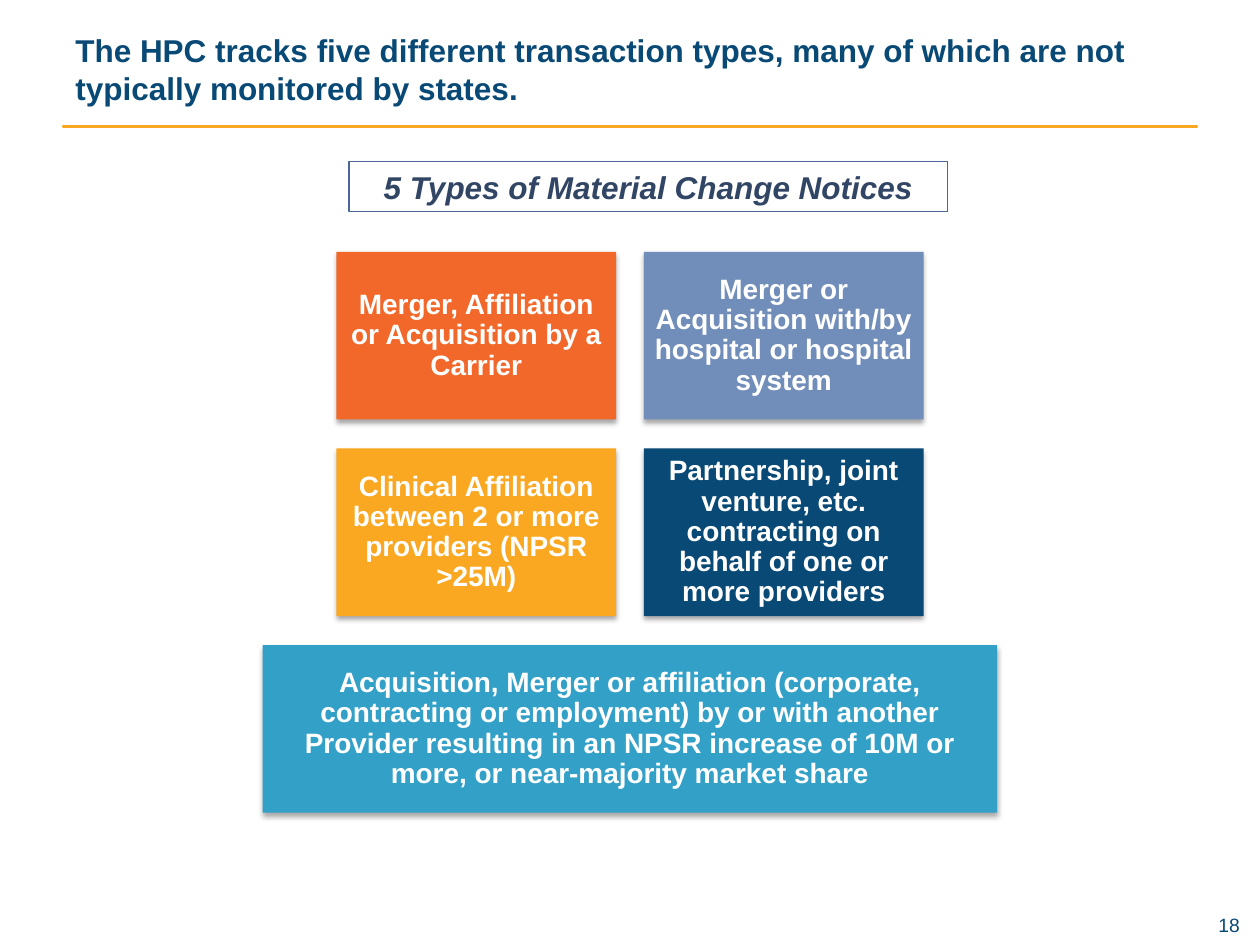
from lxml.etree import SubElement
from pptx import Presentation
from pptx.dml.color import RGBColor
from pptx.enum.shapes import MSO_SHAPE
from pptx.enum.text import MSO_ANCHOR, PP_ALIGN
from pptx.oxml.ns import qn
from pptx.util import Inches, Pt

NAVY = "094975"
GOLD = "FAA721"
WHITE = "FFFFFF"


def colour(value):
    return RGBColor.from_string(value)


class SlideBuilder:
    font = "Arial"

    def __init__(self, page):
        self.page = page

    def fill_text(self, box, text, size, ink, align=PP_ALIGN.LEFT, anchor=MSO_ANCHOR.MIDDLE,
                  margins=(0.1, 0.05), spacing=1.0, bold=True, italic=False):
        frame = box.text_frame
        frame.word_wrap = True
        frame.vertical_anchor = anchor
        frame.margin_left = frame.margin_right = Inches(margins[0])
        frame.margin_top = frame.margin_bottom = Inches(margins[1])
        para = frame.paragraphs[0]
        para.alignment = align
        para.line_spacing = spacing
        span = para.add_run()
        span.text = text
        span.font.name = self.font
        span.font.size = Pt(size)
        span.font.bold = bold
        span.font.italic = italic
        span.font.color.rgb = colour(ink)

    def label(self, place, text, size, ink, **style):
        box = self.page.shapes.add_textbox(*map(Inches, place))
        self.fill_text(box, text, size, ink, **style)

    def rectangle(self, place, fill=None, line=None, width=1):
        box = self.page.shapes.add_shape(MSO_SHAPE.RECTANGLE, *map(Inches, place))
        box.shadow.inherit = False
        if fill:
            box.fill.solid()
            box.fill.fore_color.rgb = colour(fill)
        else:
            box.fill.background()
        if line:
            box.line.color.rgb = colour(line)
            box.line.width = Pt(width)
        else:
            box.line.fill.background()
        return box

    def add_shadow(self, box):
        effects = box._element.spPr.find(qn("a:effectLst"))
        shadow = SubElement(effects, qn("a:outerShdw"), blurRad=str(Pt(3.1)),
                            dist=str(Pt(1.8)), dir="5400000", rotWithShape="0")
        tint = SubElement(shadow, qn("a:srgbClr"), val="000000")
        SubElement(tint, qn("a:alpha"), val="35000")

    def heading(self, place, text):
        box = self.rectangle(place, line="4A6796", width=0.75)
        self.fill_text(box, text, 18, "314564", align=PP_ALIGN.CENTER, italic=True)

    def card(self, place, text, fill):
        box = self.rectangle(place, fill)
        self.add_shadow(box)
        self.fill_text(box, text, 16, WHITE, align=PP_ALIGN.CENTER,
                       margins=(0.07, 0.07), spacing=0.9)


def main():
    deck = Presentation()
    deck.slide_width = Inches(10)
    deck.slide_height = Inches(7.5)
    builder = SlideBuilder(deck.slides.add_slide(deck.slide_layouts[6]))

    builder.rectangle((0.5, 1, 9, 0.01), GOLD, GOLD)
    builder.label((7.42, 7.25, 2.42, 0.19), "18", 11, NAVY, align=PP_ALIGN.RIGHT,
                  anchor=MSO_ANCHOR.TOP, margins=(0, 0), bold=False)
    builder.label((0.5, 0.17, 9, 0.75),
                  "The HPC tracks five different transaction types, "
                  "many of which are not typically monitored by states.", 18, NAVY)
    builder.heading((2.77, 1.28, 4.75, 0.4), "5 Types of Material Change Notices")

    left, top, width, height = 2.67, 2, 2.22, 1.33
    column_step, row_step = 2.44, 1.56
    notices = [
        ("Merger, Affiliation or Acquisition by a Carrier", "F2682A"),
        ("Merger or Acquisition with/by hospital or hospital system", "718DB9"),
        ("Clinical Affiliation between 2 or more providers (NPSR >25M)", GOLD),
        ("Partnership, joint venture, etc. contracting on behalf of one or more providers",
         NAVY),
    ]
    for index, (text, fill) in enumerate(notices):
        row, column = divmod(index, 2)
        place = (left + column * column_step, top + row * row_step, width, height)
        builder.card(place, text, fill)

    wide = 5.83
    builder.card(((10 - wide) / 2, top + 2 * row_step, wide, height),
                 "Acquisition, Merger or affiliation (corporate, contracting or employment) "
                 "by or with another Provider resulting in an NPSR increase of 10M or more, "
                 "or near-majority market share", "33A0C8")

    deck.save("out.pptx")


if __name__ == "__main__":
    main()
